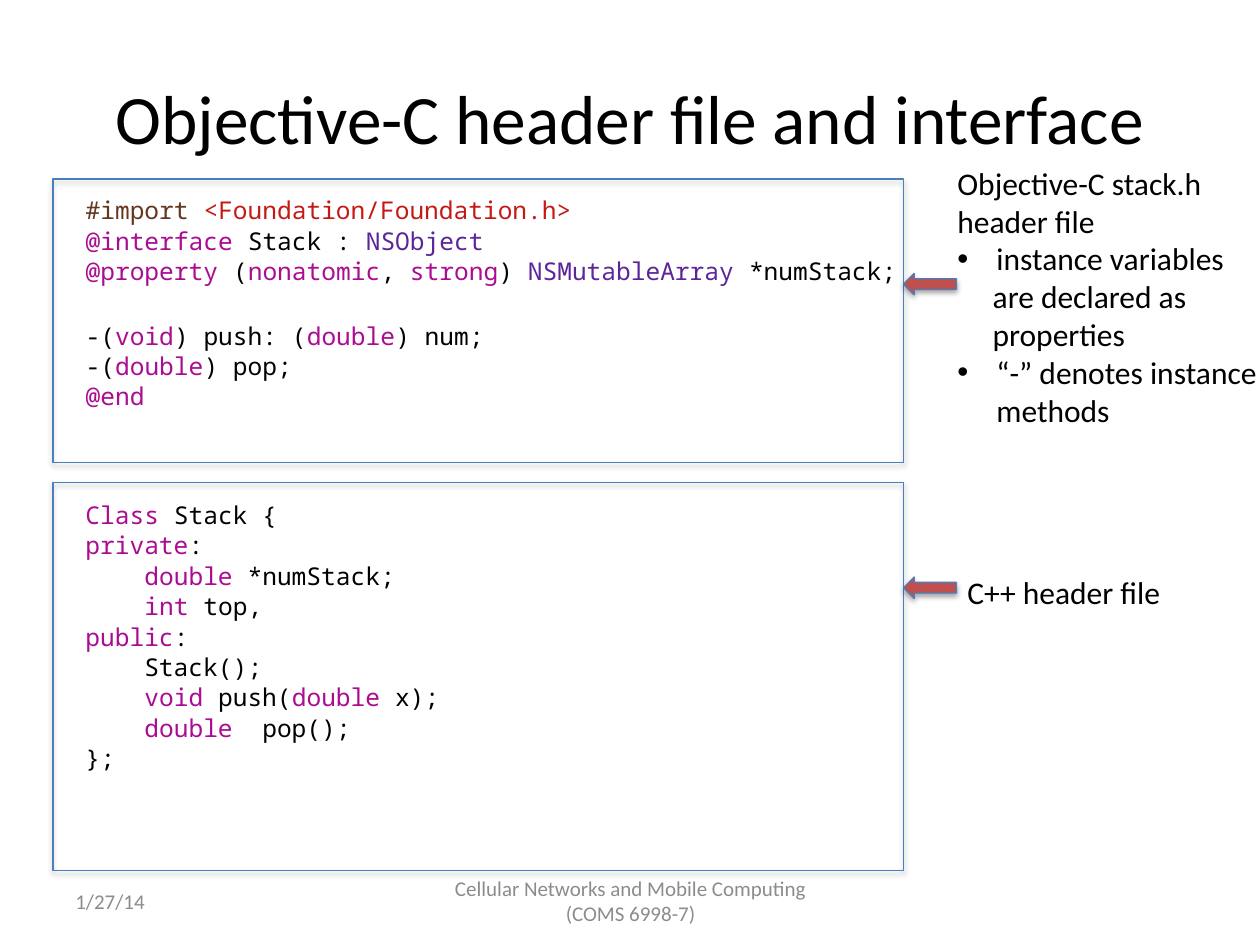
from dataclasses import dataclass

from lxml import etree
from pptx import Presentation
from pptx import util as u
from pptx.dml.color import RGBColor
from pptx.enum import shapes, text
from pptx.oxml import ns

BLACK, GREY, BLUE, RED = "000000", "8C8C8C", "4B7EBC", "C0504D"
KEYWORD, TYPE = "AA0D91", "5C2699"
TOKEN_COLOURS = {
    "#import": "643820",
    "<Foundation/Foundation.h>": "C41A16",
    **dict.fromkeys(["NSObject", "NSMutableArray"], TYPE),
    **dict.fromkeys(["@interface", "@property", "@end", "nonatomic", "strong", "void",
                     "double", "int", "Class", "private", "public"], KEYWORD),
}
# A bar separates the tokens of a line of code.
OBJC_LINES = [
    "#import |<Foundation/Foundation.h>",
    "@interface| Stack : |NSObject",
    "@property| (|nonatomic|, |strong|) |NSMutableArray| *numStack;",
    "-(|void|) push: (|double|) num;",
    "-(|double|) pop;",
    "@end",
]
CPP_LINES = [
    "Class |Stack {",
    "private|:",
    "    |double |*numStack;",
    "    |int| top,",
    "public|:",
    "    Stack();",
    "    |void| push(|double| x);",
    "    |double|  pop();",
    "};",
]
LINE_GAP, BLANK_LINE = 0.55, 19.6


@dataclass
class Box:
    left: float
    top: float
    width: float
    height: float

    def lengths(self):
        return [u.Inches(n) for n in (self.left, self.top, self.width, self.height)]


@dataclass
class Note:
    words: str
    indent: float = 0
    bullet: bool = False


@dataclass
class Label:
    box: Box
    notes: list[Note]
    size: int = 18
    colour: str = BLACK
    centred: bool = False
    middle: bool = False
    wrap: bool = True


def rgb(colour: str) -> RGBColor:
    return RGBColor.from_string(colour)


def set_font(font, size: float, colour: str, name: str = "Calibri"):
    for key, value in {"size": u.Pt(size), "name": name}.items():
        setattr(font, key, value)
    font.color.rgb = rgb(colour)


def set_indent(paragraph, indent: float, bullet: bool):
    properties = paragraph._p.get_or_add_pPr()
    properties.set("marL", str(u.Inches(indent)))
    properties.set("indent", str(-u.Inches(indent) if bullet else 0))
    if bullet:
        etree.SubElement(properties, ns.qn("a:buFont")).set("typeface", "Arial")
        etree.SubElement(properties, ns.qn("a:buChar")).set("char", "•")
    else:
        etree.SubElement(properties, ns.qn("a:buNone"))


def paragraphs(frame, count: int):
    return [frame.paragraphs[0]] + [frame.add_paragraph() for _ in range(count - 1)]


def place(shape, box: Box):
    shape.left, shape.top, shape.width, shape.height = box.lengths()


def write_code(frame, lines: list[str], after_blank: int | None = None):
    """Write coloured code; a blank line's gap stands before line after_blank."""
    frame.word_wrap = True
    frame.auto_size = text.MSO_AUTO_SIZE.NONE
    for index, (paragraph, line) in enumerate(zip(paragraphs(frame, len(lines)), lines)):
        set_indent(paragraph, 0, False)
        gap = LINE_GAP if index else 0
        if index == after_blank:
            gap += BLANK_LINE
        paragraph.space_before = u.Pt(gap)
        for token in line.split("|"):
            run = paragraph.add_run()
            run.text = token
            set_font(run.font, 14, TOKEN_COLOURS.get(token.strip(), BLACK), "Noto Sans Mono")


def add_label(slide, label: Label):
    frame = slide.shapes.add_textbox(*label.box.lengths()).text_frame
    frame.word_wrap = label.wrap
    frame.vertical_anchor = text.MSO_ANCHOR.MIDDLE if label.middle else text.MSO_ANCHOR.TOP
    for paragraph, note in zip(paragraphs(frame, len(label.notes)), label.notes):
        set_indent(paragraph, note.indent, note.bullet)
        paragraph.alignment = text.PP_ALIGN.CENTER if label.centred else text.PP_ALIGN.LEFT
        run = paragraph.add_run()
        run.text = note.words
        set_font(run.font, label.size, label.colour)


def add_shadow(shape):
    shape.shadow.inherit = False
    effects = shape._element.spPr.find(ns.qn("a:effectLst"))
    outer = etree.SubElement(effects, ns.qn("a:outerShdw"), blurRad=str(u.Pt(3.1)),
                             dist=str(u.Pt(1.8)), dir="5400000", rotWithShape="0")
    colour = etree.SubElement(outer, ns.qn("a:srgbClr"), val=BLACK)
    etree.SubElement(colour, ns.qn("a:alpha"), val="35000")


def add_outlined(slide, kind, box: Box, fill: str | None = None):
    shape = slide.shapes.add_shape(kind, *box.lengths())
    if fill:
        shape.fill.solid()
        shape.fill.fore_color.rgb = rgb(fill)
    else:
        shape.fill.background()
    shape.line.color.rgb = rgb(BLUE)
    shape.line.width = u.Pt(0.75)
    add_shadow(shape)


LABELS = [
    Label(Box(7.5, 1.25, 2.75, 2.22), [
        Note("Objective-C stack.h header file"),
        Note("instance variables", 0.31, True),
        Note("are declared as", 0.28),
        Note("properties", 0.28),
        Note("“-” denotes instance methods", 0.31, True),
    ]),
    Label(Box(7.58, 4.5, 1.74, 0.4), [Note("C++ header file")], wrap=False),
    Label(Box(3.42, 6.95, 3.17, 0.4),
          [Note("Cellular Networks and Mobile Computing (COMS 6998-7)")],
          12, GREY, centred=True, middle=True),
    Label(Box(0.5, 6.95, 2.33, 0.4), [Note("1/27/14")], 12, GREY, middle=True),
]


def main():
    presentation = Presentation()
    presentation.slide_width, presentation.slide_height = u.Inches(10), u.Inches(7.5)
    slide = presentation.slides.add_slide(presentation.slide_layouts[1])

    title, body = slide.placeholders
    place(title, Box(0.5, 0.3, 9, 1.25))
    frame = title.text_frame
    frame.text = "Objective-C header file and interface"
    frame.auto_size = text.MSO_AUTO_SIZE.NONE
    frame.vertical_anchor = text.MSO_ANCHOR.MIDDLE
    set_font(frame.paragraphs[0].runs[0].font, 39.6, BLACK)

    place(body, Box(0.58, 1.5, 7.5, 2.25))
    write_code(body.text_frame, OBJC_LINES, after_blank=3)
    cpp_box = slide.shapes.add_textbox(*Box(0.58, 3.92, 6.58, 3.17).lengths())
    write_code(cpp_box.text_frame, CPP_LINES)

    for top, height, arrow_top in ((1.42, 2.25, 2.17), (3.83, 3.08, 4.58)):
        add_outlined(slide, shapes.MSO_SHAPE.RECTANGLE, Box(0.42, top, 6.75, height))
        add_outlined(slide, shapes.MSO_SHAPE.LEFT_ARROW, Box(7.17, arrow_top, 0.42, 0.17), RED)
    for label in LABELS:
        add_label(slide, label)

    presentation.save("out.pptx")


if __name__ == "__main__":
    main()
